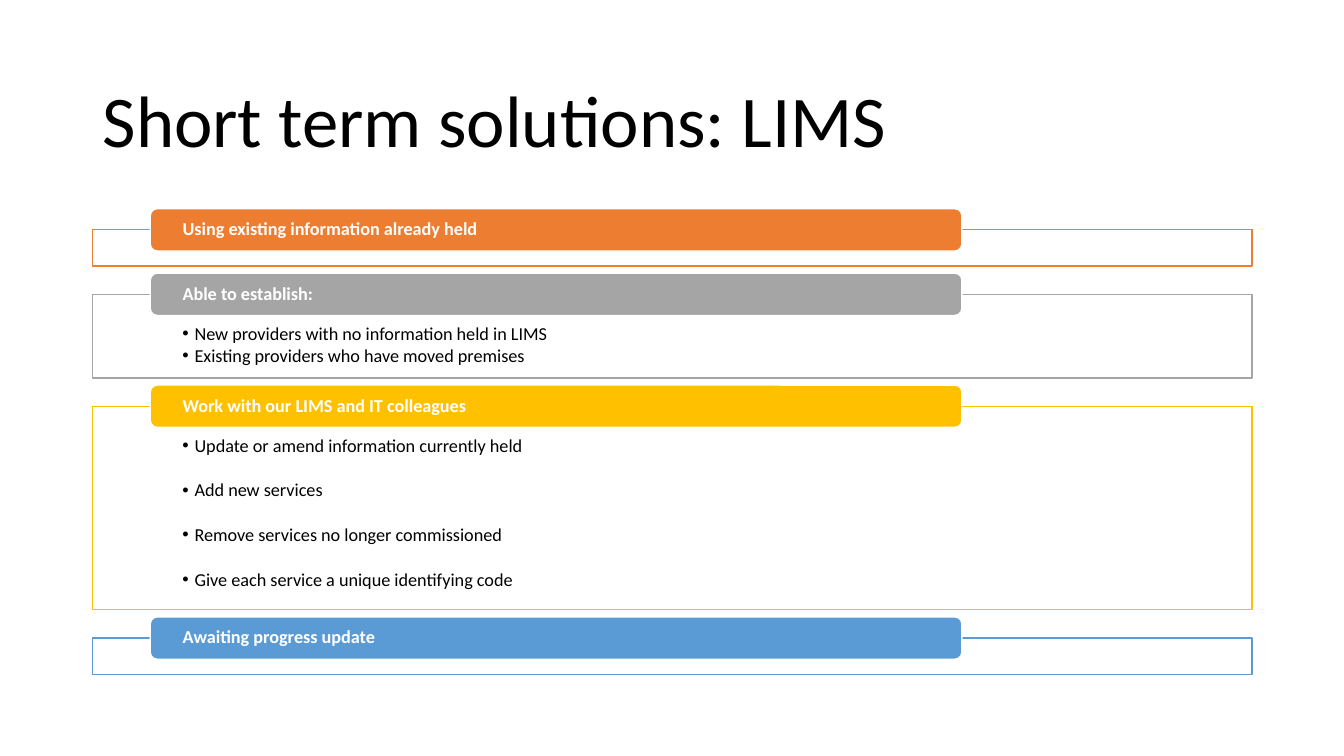
from lxml.etree import SubElement
from pptx import Presentation
from pptx.dml.color import RGBColor
from pptx.enum.shapes import MSO_SHAPE as Shape
from pptx.enum.text import MSO_ANCHOR as Anchor, PP_ALIGN as Align
from pptx.oxml.ns import qn
from pptx.util import Inches, Pt

LEFT, WIDTH = 0.92, 11.5
FIRST_TOP, GAP = 2.28, 0.28
TAB_HEIGHT, TAB_RISE = 0.42, 0.21
TAB_INDENT, TAB_SHARE = 0.57, 0.7

SECTIONS = [
    ("Using existing information already held", "ED7D31", 0.36, 0, []),
    ("Able to establish:", "A5A5A5", 0.83, 1.8, [
        "New providers with no information held in LIMS",
        "Existing providers who have moved premises"]),
    ("Work with our LIMS and IT colleagues", "FFC000", 2.02, 17.8, [
        "Update or amend information currently held",
        "Add new services",
        "Remove services no longer commissioned",
        "Give each service a unique identifying code"]),
    ("Awaiting progress update", "5B9BD5", 0.36, 0, []),
]


def color(value):
    """Turn a hex string into a colour."""
    return RGBColor.from_string(value)


def write(shape, lines, size, ink, insets, anchor, bold=False, after=0):
    """Fill a shape with left-aligned paragraphs and return them."""
    frame = shape.text_frame
    frame.word_wrap = True
    frame.vertical_anchor = anchor
    (frame.margin_left, frame.margin_top,
     frame.margin_right, frame.margin_bottom) = map(Inches, insets)
    frame.text = "\n".join(lines)
    for para in frame.paragraphs:
        para.alignment = Align.LEFT
        para.line_spacing = 0.9
        para.space_after = Pt(after)
        for span in para.runs:
            span.font.name = "Calibri"
            span.font.size = Pt(size)
            span.font.bold = bold
            span.font.color.rgb = color(ink)
    return frame.paragraphs


def add_bullet(para):
    """Give a paragraph a round bullet with a hanging indent."""
    props = para._p.get_or_add_pPr()
    props.set("marL", str(Inches(0.12)))
    props.set("indent", str(Inches(-0.12)))
    SubElement(props, qn("a:buFont"), typeface="Arial")
    SubElement(props, qn("a:buChar"), char="•")


def add_panel(page, kind, box, fill, line):
    """Add a filled and outlined shape in the given box."""
    panel = page.shapes.add_shape(kind, *map(Inches, box))
    panel.shadow.inherit = False
    panel.fill.solid()
    panel.fill.fore_color.rgb = color(fill)
    panel.line.color.rgb = color(line)
    panel.line.width = Pt(1)
    return panel


def add_title(page, box, text):
    """Add the slide title."""
    title = page.shapes.add_textbox(*map(Inches, box))
    write(title, [text], 52, "000000", (0.1, 0.05, 0.1, 0.05), Anchor.MIDDLE)


def add_section(page, box, heading, accent, after, points):
    """Add an outlined frame of bullets with a heading tab over its top edge."""
    left, top, width, height = box
    frame = add_panel(page, Shape.RECTANGLE, box, "FFFFFF", accent)
    if points:
        for para in write(frame, points, 13, "000000",
                          (0.89, 0.3, 0.89, 0.1), Anchor.TOP, after=after):
            add_bullet(para)
    tab_box = (left + TAB_INDENT, top - TAB_RISE, width * TAB_SHARE, TAB_HEIGHT)
    tab = add_panel(page, Shape.ROUNDED_RECTANGLE, tab_box, accent, "FFFFFF")
    write(tab, [heading], 13, "FFFFFF", (0.3, 0, 0.3, 0), Anchor.MIDDLE, bold=True)


def main():
    """Build the slide and save it."""
    deck = Presentation()
    deck.slide_width, deck.slide_height = Inches(13.33), Inches(7.5)
    page = deck.slides.add_slide(deck.slide_layouts[6])
    add_title(page, (LEFT, 0.61, WIDTH, 1.24), "Short term solutions: LIMS")
    top = FIRST_TOP
    for heading, accent, height, after, points in SECTIONS:
        add_section(page, (LEFT, top, WIDTH, height), heading, accent, after, points)
        top += height + GAP
    deck.save("out.pptx")


if __name__ == "__main__":
    main()
